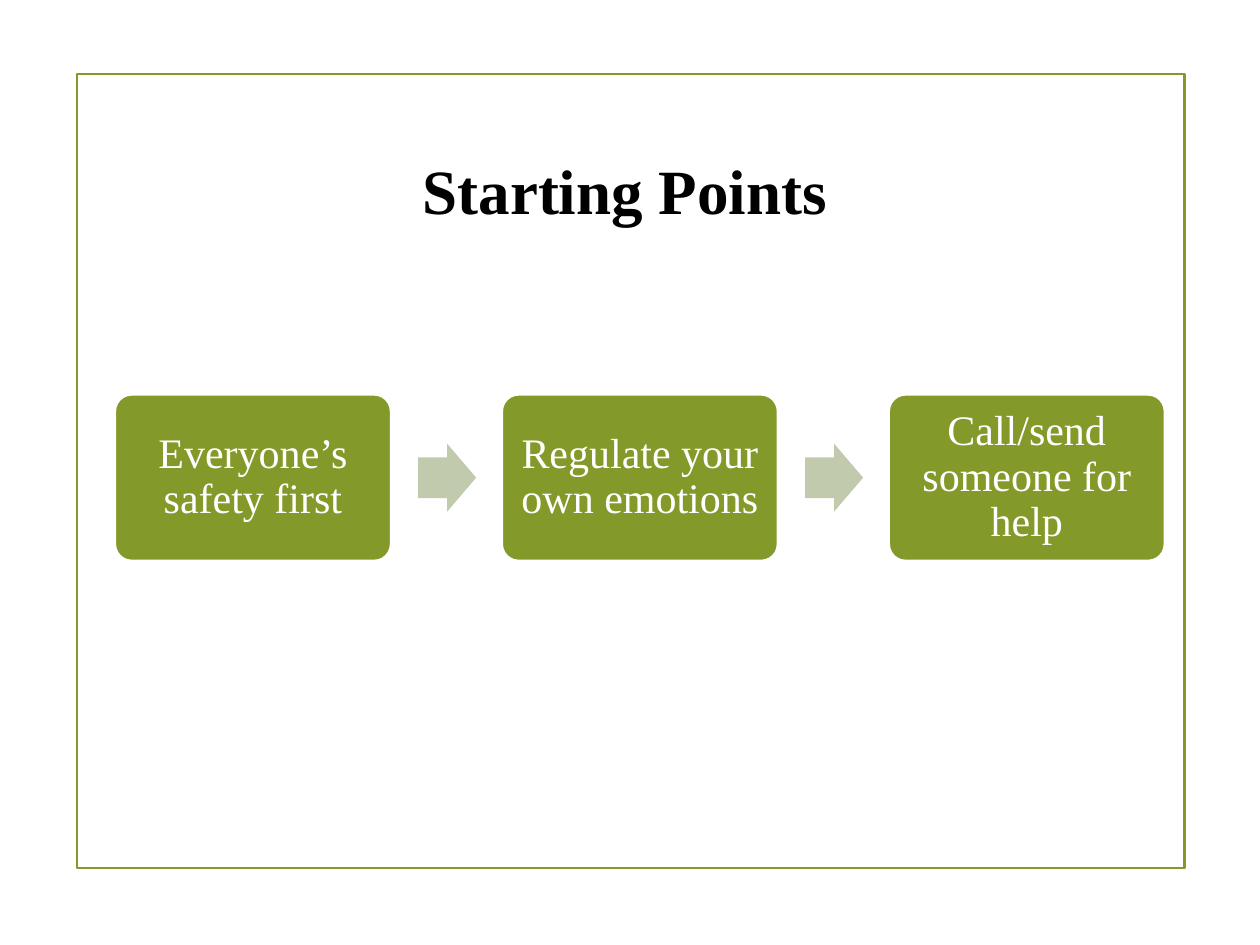
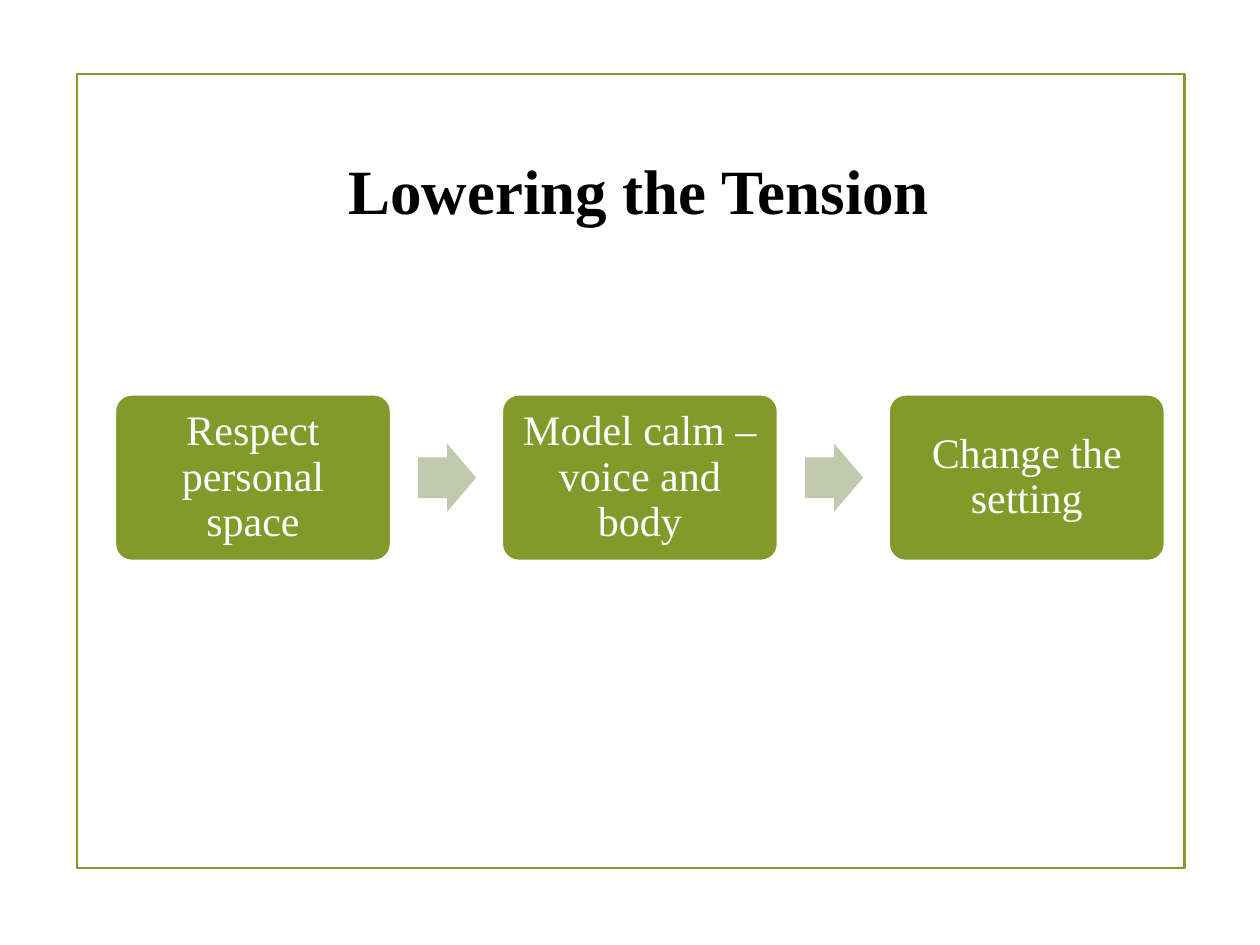
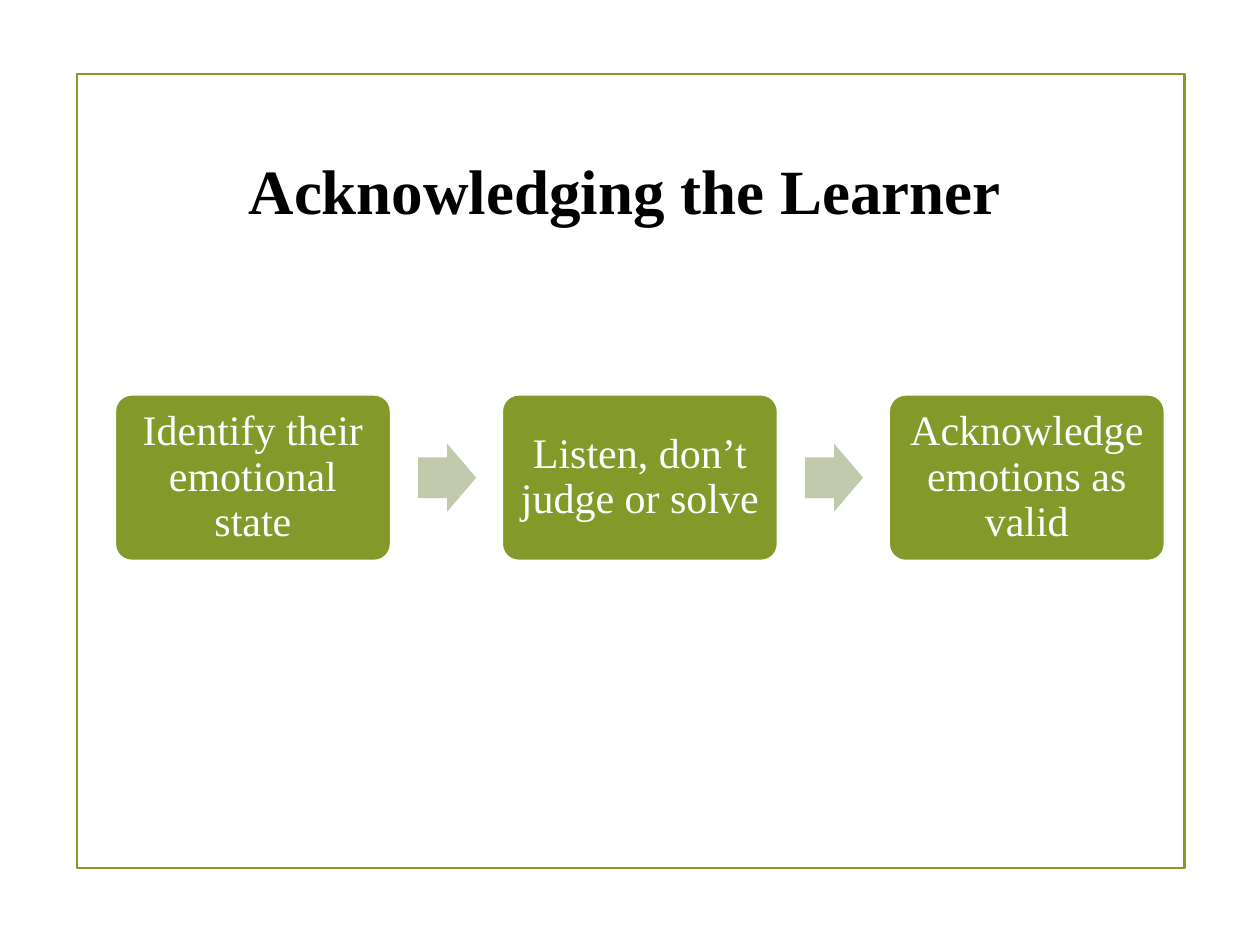
"""Build three slides, each with a titled chain of three steps."""
from pptx import Presentation
from pptx.dml.color import RGBColor
from pptx.enum.shapes import MSO_SHAPE
from pptx.enum.text import MSO_ANCHOR, MSO_AUTO_SIZE, PP_ALIGN
from pptx.util import Cm, Pt

SLIDES = [
    {"title": "Starting Points", "left": 6.5, "width": 12.19,
     "steps": ["Everyone’s safety first", "Regulate your own emotions",
               "Call/send someone for help"]},
    {"title": "Lowering the Tension", "left": 5.26, "width": 15.24,
     "steps": ["Respect personal space", "Model calm – voice and body",
               "Change the setting"]},
    {"title": "Acknowledging the Learner", "left": 4.29, "width": 16.61,
     "steps": ["Identify their emotional state", "Listen, don’t judge or solve",
               "Acknowledge emotions as valid"]},
]

GREEN = RGBColor(0x83, 0x99, 0x2A)
SAGE = RGBColor(0xC1, 0xCA, 0xAD)
WHITE = RGBColor(0xFF, 0xFF, 0xFF)
BLACK = RGBColor(0x00, 0x00, 0x00)
FONT = "Times New Roman"

FRAME = (1.55, 1.5, 22.33, 16)
TITLE_TOP, TITLE_HIGH = 2.92, 1.8
LEFT, MIDDLE, PITCH = 2.32, 9.63, 7.8
STEP_WIDE, STEP_HIGH = 5.56, 3.35
ARROW_WIDE, ARROW_HIGH, ARROW_GAP = 1.17, 1.37, 0.55
INSET = 0.25


def add_shape(slide, kind, box, fill=None, line=None, adjust=()):
    shape = slide.shapes.add_shape(kind, *map(Cm, box))
    shape.shadow.inherit = False
    for index, value in enumerate(adjust):
        shape.adjustments[index] = value
    if fill is None:
        shape.fill.background()
    else:
        shape.fill.solid()
        shape.fill.fore_color.rgb = fill
    if line is None:
        shape.line.fill.background()
    else:
        shape.line.color.rgb = line
        shape.line.width = Pt(1.25)
    return shape


def write(frame, text, size, color, bold=False):
    frame.word_wrap = True
    para = frame.paragraphs[0]
    para.alignment = PP_ALIGN.CENTER
    run = para.add_run()
    run.text = text
    font = run.font
    font.name, font.size, font.bold = FONT, Pt(size), bold
    font.color.rgb = color
    return para


def add_title(slide, text, left, width):
    box = slide.shapes.add_textbox(Cm(left), Cm(TITLE_TOP), Cm(width), Cm(TITLE_HIGH))
    write(box.text_frame, text, 36, BLACK, bold=True)
    box.text_frame.auto_size = MSO_AUTO_SIZE.SHAPE_TO_FIT_TEXT


def add_step(slide, left, text):
    box = (left, MIDDLE - STEP_HIGH / 2, STEP_WIDE, STEP_HIGH)
    step = add_shape(slide, MSO_SHAPE.ROUNDED_RECTANGLE, box, GREEN, WHITE, [0.1])
    frame = step.text_frame
    frame.margin_left = frame.margin_right = Cm(INSET)
    frame.margin_top = frame.margin_bottom = Cm(INSET)
    frame.vertical_anchor = MSO_ANCHOR.MIDDLE
    write(frame, text, 24, WHITE).line_spacing = 0.9


def add_chain(slide, steps):
    for index, text in enumerate(steps):
        left = LEFT + index * PITCH
        if index:
            start = left - PITCH + STEP_WIDE + ARROW_GAP
            box = (start, MIDDLE - ARROW_HIGH / 2, ARROW_WIDE, ARROW_HIGH)
            add_shape(slide, MSO_SHAPE.RIGHT_ARROW, box, SAGE, adjust=[0.6, 0.5])
        add_step(slide, left, text)


def main():
    deck = Presentation()
    deck.slide_width, deck.slide_height = Cm(25.4), Cm(19.05)
    for item in SLIDES:
        slide = deck.slides.add_slide(deck.slide_layouts[6])
        add_shape(slide, MSO_SHAPE.RECTANGLE, FRAME, line=GREEN)
        add_chain(slide, item["steps"])
        add_title(slide, item["title"], item["left"], item["width"])
    deck.save("out.pptx")


if __name__ == "__main__":
    main()
